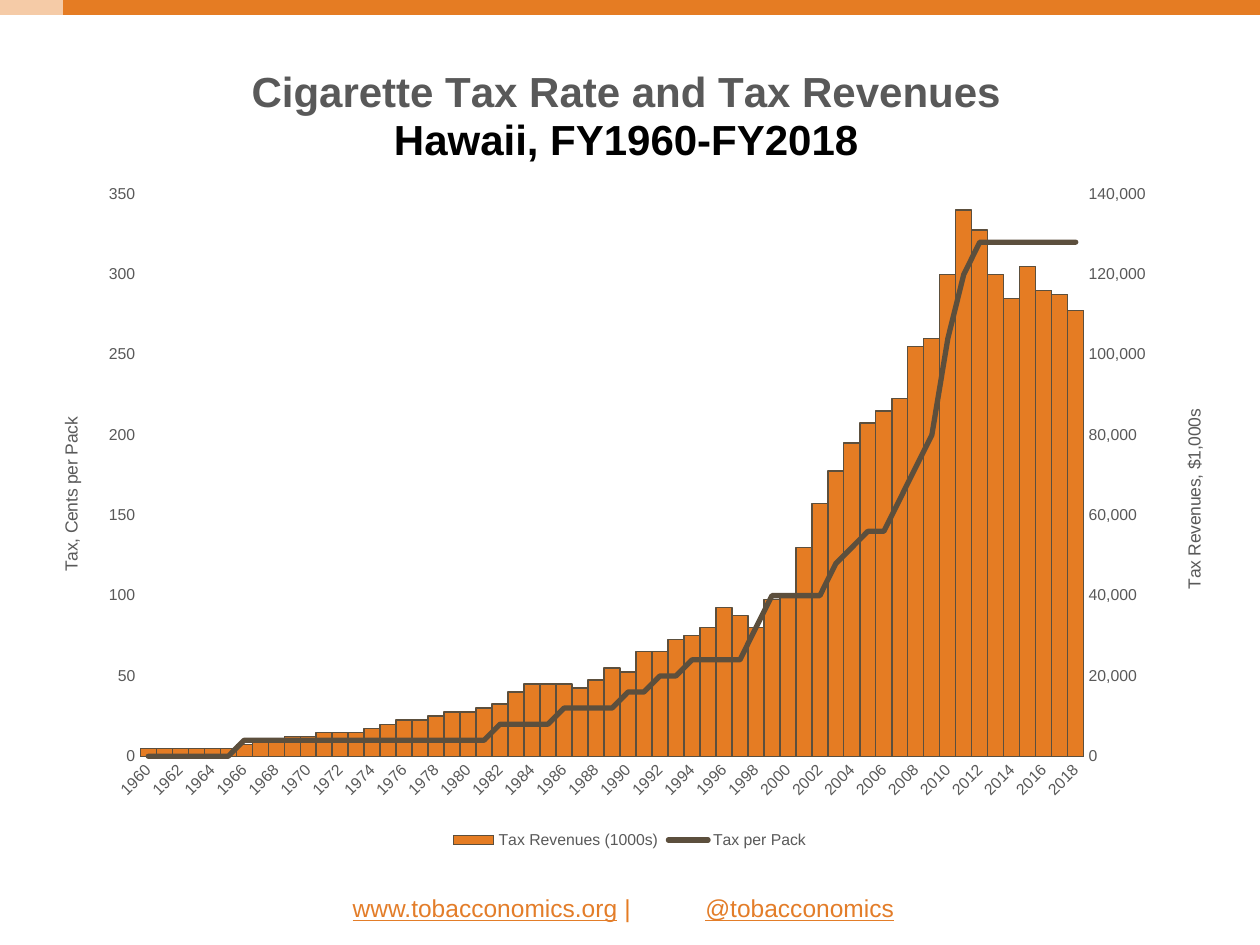
"""Build a slide with a combined chart of cigarette tax rate and tax revenues."""
from copy import deepcopy

from pptx import Presentation
from pptx.chart.axis import CategoryAxis, ValueAxis
from pptx.chart.data import CategoryChartData
from pptx.dml.color import RGBColor
from pptx.enum.chart import (XL_CHART_TYPE, XL_LEGEND_POSITION, XL_MARKER_STYLE,
                             XL_TICK_MARK)
from pptx.enum.shapes import MSO_SHAPE
from pptx.oxml import parse_xml
from pptx.oxml.ns import nsdecls, qn
from pptx.util import Cm, Pt

FONT = "Arial"
ORANGE, PEACH, BROWN, GRAY, BLACK = "E57C23", "F5CBA7", "5C4F3D", "595959", "000000"
LINK = "E37D29"

HEADER_BARS = [(1.27, 24.13, ORANGE), (0, 1.27, PEACH)]
TITLE_LINES = [("Cigarette Tax Rate and Tax Revenues", GRAY), ("Hawaii, FY1960-FY2018", BLACK)]
FOOTER = [("www.tobacconomics.org", LINK, True), (" |\t", ORANGE, False),
          ("@tobacconomics", LINK, True)]

YEARS = [str(year) for year in range(1960, 2019)]
REVENUES_THOUSANDS = [
    2, 2, 2, 2, 2, 2, 3, 4, 4, 5,
    5, 6, 6, 6, 7, 8, 9, 9, 10, 11,
    11, 12, 13, 16, 18, 18, 18, 17, 19, 22,
    21, 26, 26, 29, 30, 32, 37, 35, 32, 39,
    40, 52, 63, 71, 78, 83, 86, 89, 102, 104,
    120, 136, 131, 120, 114, 122, 116, 115, 111]
CENTS_PER_PACK = [
    0, 0, 0, 0, 0, 0, 10, 10, 10, 10,
    10, 10, 10, 10, 10, 10, 10, 10, 10, 10,
    10, 10, 20, 20, 20, 20, 30, 30, 30, 30,
    40, 40, 50, 50, 60, 60, 60, 60, 80, 100,
    100, 100, 100, 120, 130, 140, 140, 160, 180, 200,
    260, 300, 320, 320, 320, 320, 320, 320, 320]


def color(value):
    return RGBColor.from_string(value)


def style_font(font, size, fill, bold=False):
    font.name, font.size, font.bold = FONT, Pt(size), bold
    font.color.rgb = color(fill)


def write(para, text, size=10, fill=GRAY, bold=False, underline=False):
    span = para.add_run()
    span.text = text
    style_font(span.font, size, fill, bold)
    span.font.underline = underline


def place(element, **fractions):
    for old in element.findall(qn("c:layout")):
        element.remove(old)
    target = '<c:layoutTarget val="inner"/>' if "w" in fractions else ""
    modes = "".join(f'<c:{key}Mode val="edge"/>' for key in "xy")
    values = "".join(f'<c:{key} val="{value}"/>' for key, value in fractions.items())
    layout = parse_xml(f'<c:layout {nsdecls("c")}><c:manualLayout>{target}{modes}{values}'
                       '</c:manualLayout></c:layout>')
    element.insert(0 if element.find(qn("c:tx")) is None else 1, layout)


def format_value_axis(axis, title, maximum, step, number_format, x, y):
    axis.has_major_gridlines = False
    axis.minimum_scale, axis.maximum_scale, axis.major_unit = 0, maximum, step
    axis.major_tick_mark = axis.minor_tick_mark = XL_TICK_MARK.NONE
    axis.format.line.fill.background()
    axis.tick_labels.number_format = number_format
    axis.tick_labels.number_format_is_linked = False
    style_font(axis.tick_labels.font, 9, GRAY)
    frame = axis.axis_title.text_frame
    write(frame.paragraphs[0], title)
    body = frame._txBody.find(qn("a:bodyPr"))
    body.set("rot", "-5400000")
    body.set("vert", "horz")
    place(axis.axis_title._element, x=x, y=y)


def add_second_axes(chart):
    area = chart._chartSpace.chart.plotArea
    bars = area.find(qn("c:barChart"))
    series = bars.findall(qn("c:ser"))[1]
    bars.remove(series)
    for flag in series.findall(qn("c:invertIfNegative")):
        series.remove(flag)
    lines = parse_xml(f'<c:lineChart {nsdecls("c")}><c:grouping val="standard"/>'
                      '<c:varyColors val="0"/><c:marker val="1"/>'
                      '<c:axId val="5001"/><c:axId val="5002"/></c:lineChart>')
    lines.insert(2, series)
    bars.addnext(lines)
    right = area.find(qn("c:valAx"))
    category, left = deepcopy(area.find(qn("c:catAx"))), deepcopy(right)
    for axis, own, other in ((left, "5002", "5001"), (category, "5001", "5002")):
        axis.find(qn("c:axId")).set("val", own)
        axis.find(qn("c:crossAx")).set("val", other)
        right.addnext(axis)
    right.find(qn("c:axPos")).set("val", "r")
    right.find(qn("c:crosses")).set("val", "max")
    CategoryAxis(category).visible = False
    return ValueAxis(left), ValueAxis(right)


def add_tax_chart(page):
    data = CategoryChartData(number_format="#,##0")
    data.categories = YEARS
    data.add_series("Tax Revenues (1000s)", [value * 1000 for value in REVENUES_THOUSANDS])
    data.add_series("Tax per Pack", CENTS_PER_PACK)
    chart = page.shapes.add_chart(XL_CHART_TYPE.COLUMN_CLUSTERED, Cm(0.66), Cm(0.79),
                                  Cm(24.08), Cm(16.43), data).chart
    style_font(chart.font, 10, BLACK)
    cents_axis, revenue_axis = add_second_axes(chart)
    format_value_axis(revenue_axis, "Tax Revenues, $1,000s", 140000, 20000, "#,##0", 0.96, 0.45)
    format_value_axis(cents_axis, "Tax, Cents per Pack", 350, 50, "General", 0.02, 0.46)

    years = chart.category_axis
    years.major_tick_mark = XL_TICK_MARK.NONE
    years.format.line.color.rgb = color(GRAY)
    style_font(years.tick_labels.font, 9, GRAY)
    years._element.find(qn("c:txPr")).find(qn("a:bodyPr")).set("rot", "-2700000")
    no_multi = years._element.find(qn("c:noMultiLvlLbl"))
    no_multi.addprevious(parse_xml(f'<c:tickLblSkip {nsdecls("c")} val="2"/>'))

    columns, lines = chart.plots
    columns.gap_width = 0
    columns.vary_by_categories = False
    revenue, rate = columns.series[0], lines.series[0]
    revenue.format.fill.solid()
    revenue.format.fill.fore_color.rgb = color(ORANGE)
    rate.smooth = False
    rate.marker.style = XL_MARKER_STYLE.NONE
    for series, width in ((revenue, 0.75), (rate, 3)):
        series.format.line.color.rgb = color(BROWN)
        series.format.line.width = Pt(width)
    rate._element.find(qn("c:spPr")).find(qn("a:ln")).set("cap", "rnd")

    chart.has_title = True
    frame = chart.chart_title.text_frame
    for index, (text, fill) in enumerate(TITLE_LINES):
        para = frame.add_paragraph() if index else frame.paragraphs[0]
        write(para, text, size=24, fill=fill, bold=True)
    place(chart.chart_title._element, x=0.18, y=0.03)
    place(chart._chartSpace.chart.plotArea, x=0.09, y=0.19, w=0.79, h=0.69)
    chart.has_legend = True
    chart.legend.position = XL_LEGEND_POSITION.BOTTOM
    chart.legend.include_in_layout = False
    style_font(chart.legend.font, 9, GRAY)


def add_footer(page):
    box = page.shapes.add_textbox(Cm(6.86), Cm(17.88), Cm(12.7), Cm(0.86))
    box.text_frame.word_wrap = True
    para = box.text_frame.paragraphs[0]
    para._p.get_or_add_pPr().append(parse_xml(
        f'<a:tabLst {nsdecls("a")}><a:tab pos="{Cm(7.11)}" algn="l"/></a:tabLst>'))
    for text, fill, underline in FOOTER:
        write(para, text, size=14, fill=fill, underline=underline)


def main():
    deck = Presentation()
    deck.slide_width, deck.slide_height = Cm(25.4), Cm(19.05)
    page = deck.slides.add_slide(deck.slide_layouts[6])
    for left, width, fill in HEADER_BARS:
        bar = page.shapes.add_shape(MSO_SHAPE.RECTANGLE, Cm(left), 0, Cm(width), Cm(0.3))
        bar.shadow.inherit = False
        bar.fill.solid()
        bar.fill.fore_color.rgb = color(fill)
        bar.line.fill.background()
    add_tax_chart(page)
    add_footer(page)
    deck.save("out.pptx")


if __name__ == "__main__":
    main()
